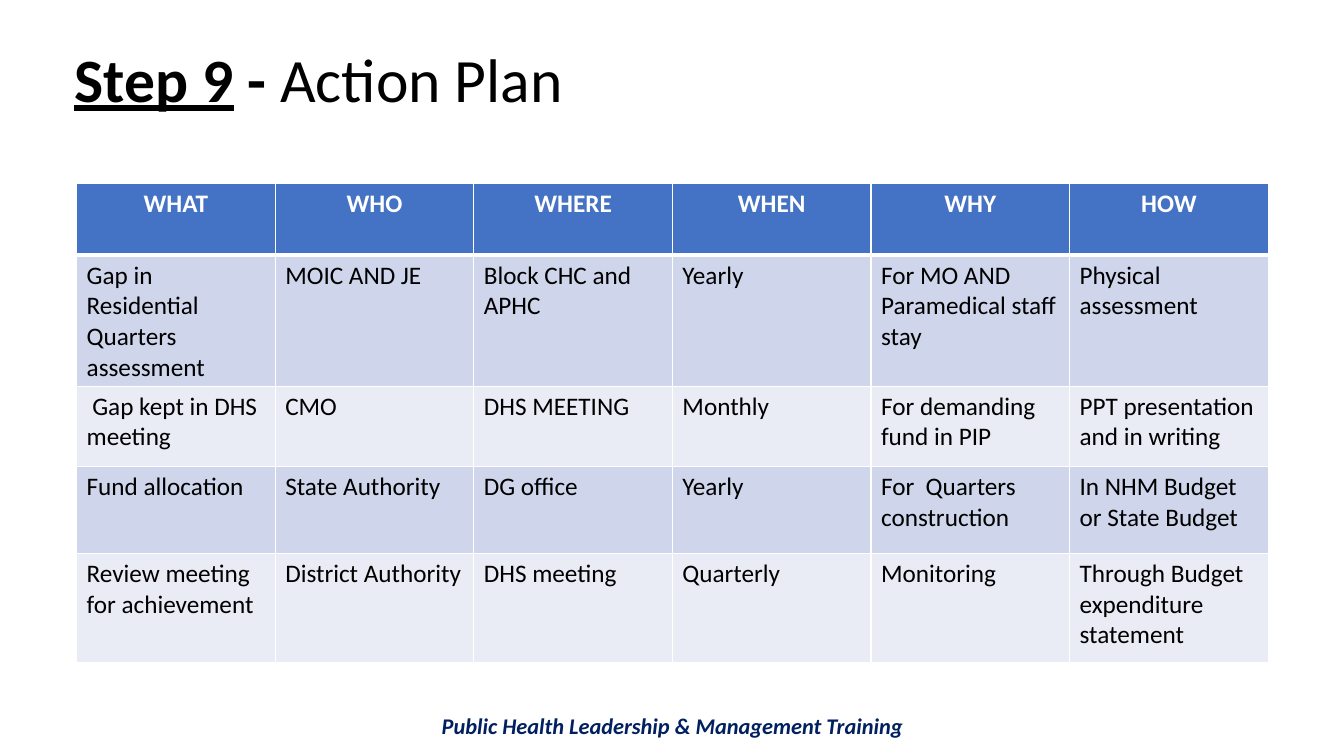
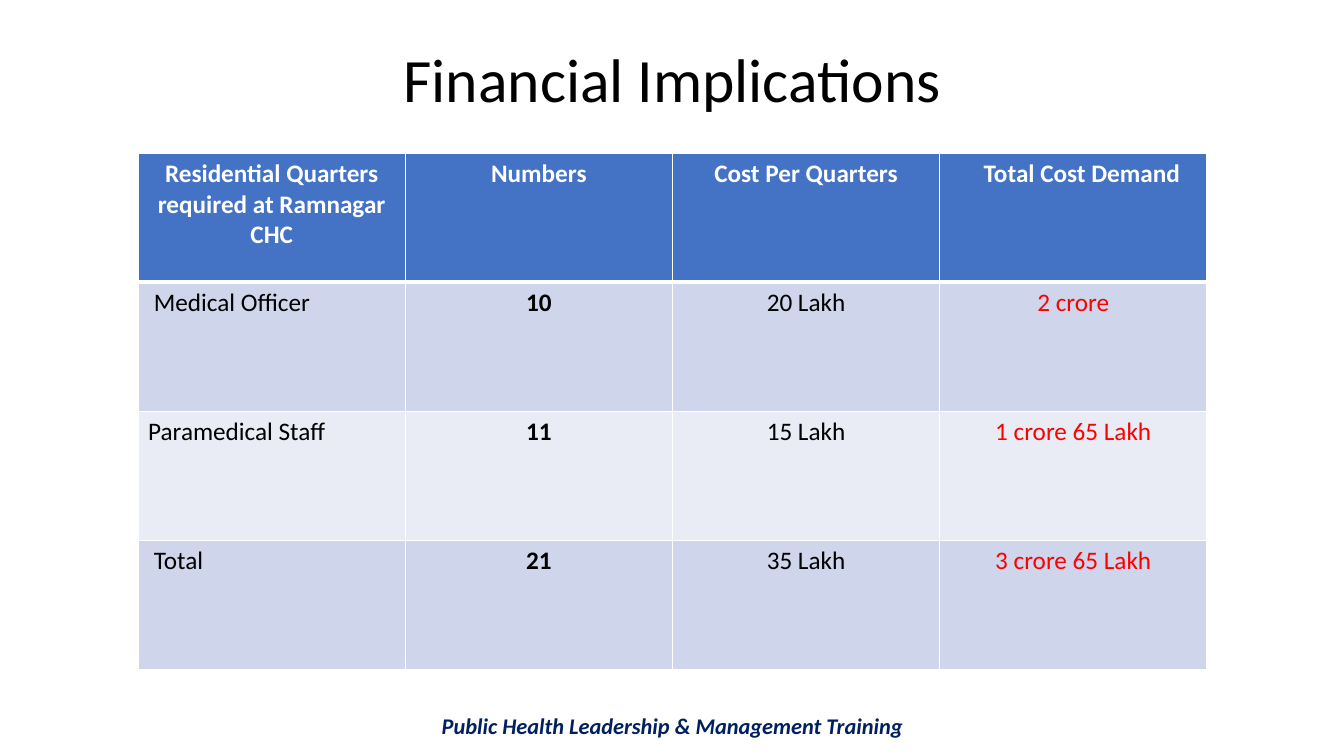
from dataclasses import dataclass

from lxml.etree import SubElement
from pptx import Presentation
from pptx.dml.color import RGBColor as RGB
from pptx.enum.text import MSO_ANCHOR as ANCHOR, PP_ALIGN as ALIGN
from pptx.oxml.ns import qn
from pptx.util import Inches, Pt


@dataclass(frozen=True)
class Theme:
    font: str = "Calibri"
    title_size: int = 44
    table_size: int = 18
    footer_size: int = 16
    text: str = "000000"
    white: str = "FFFFFF"
    header: str = "4472C4"
    bands: tuple = ("CFD5EA", "E9EBF5")
    footer: str = "002060"
    accent: str = "FF0000"


FOOTER = "Public Health Leadership & Management Training"


class Deck:
    def __init__(self, theme):
        self.theme = theme
        self.prs = Presentation()
        self.prs.slide_width, self.prs.slide_height = Inches(13.33), Inches(7.5)
        self.slide = None

    def new_slide(self):
        self.slide = self.prs.slides.add_slide(self.prs.slide_layouts[6])
        self.footer()

    def style(self, r, size, color, bold=False):
        f = r.font
        f.name, f.size, f.bold = self.theme.font, Pt(size), bold
        f.color.rgb = RGB.from_string(color)

    def text_box(self, left, top, width, height, align):
        box = self.slide.shapes.add_textbox(*map(Inches, (left, top, width, height)))
        tf = box.text_frame
        tf.word_wrap = True
        tf.paragraphs[0].alignment = align
        return tf

    def footer(self):
        tf = self.text_box(0.92, 7.02, 11.5, 0.37, ALIGN.CENTER)
        p = tf.paragraphs[0]
        p.text = FOOTER
        self.style(p.runs[0], self.theme.footer_size, self.theme.footer, bold=True)
        p.runs[0].font.italic = True

    def title(self, text, lead="", dash="", align=ALIGN.LEFT):
        """Title with an optional bold, underlined lead and a bold dash."""
        tf = self.text_box(0.64, 0.11, 12.06, 1.41, align)
        tf.vertical_anchor = ANCHOR.MIDDLE
        p = tf.paragraphs[0]
        p.line_spacing = 0.9
        for part in filter(None, (lead, dash, text)):
            r = p.add_run()
            r.text = part
            self.style(r, self.theme.title_size, self.theme.text, bold=part != text)
            r.font.underline = part == lead

    def borders(self, cell, top, bottom):
        tcPr = cell._tc.get_or_add_tcPr()
        for side, width in (("L", 1), ("R", 1), ("T", top), ("B", bottom)):
            ln = SubElement(tcPr, qn(f"a:ln{side}"), w=str(Pt(width)))
            fill = SubElement(ln, qn("a:solidFill"))
            SubElement(fill, qn("a:srgbClr"), val=self.theme.white)

    def table(self, left, top, col_width, row_heights, rows, formats):
        """formats holds (alignment, colour, bold) for each body column."""
        t = self.theme
        n = len(formats)
        frame = self.slide.shapes.add_table(
            len(rows), n, Inches(left), Inches(top),
            Inches(col_width * n), Inches(sum(row_heights)))
        table = frame.table
        for col in table.columns:
            col.width = Inches(col_width)
        for i, (height, row) in enumerate(zip(row_heights, rows)):
            table.rows[i].height = Inches(height)
            band = t.bands[(i - 1) % 2] if i else t.header
            for j, text in enumerate(row):
                align, color, bold = formats[j] if i else (ALIGN.CENTER, t.white, True)
                cell = table.cell(i, j)
                self.borders(cell, 3 if i == 1 else 1, 1 if i else 3)
                cell.fill.solid()
                cell.fill.fore_color.rgb = RGB.from_string(band)
                p = cell.text_frame.paragraphs[0]
                p.text = text
                p.alignment = align
                self.style(p.runs[0], t.table_size, color, bold)
        return table


def main():
    theme = Theme()
    deck = Deck(theme)

    # Action plan
    deck.new_slide()
    deck.title("Action Plan", lead="Step 9", dash=" - ")
    plan = [
        ("WHAT", "WHO", "WHERE", "WHEN", "WHY", "HOW"),
        ("Gap in Residential Quarters assessment", "MOIC AND JE",
         "Block CHC and APHC", "Yearly",
         "For MO AND Paramedical staff stay", "Physical assessment"),
        (" Gap kept in DHS meeting", "CMO", "DHS MEETING", "Monthly",
         "For demanding fund in PIP", "PPT presentation and in writing"),
        ("Fund allocation", "State Authority", "DG office", "Yearly",
         "For  Quarters construction", "In NHM Budget or State Budget"),
        ("Review meeting for achievement", "District Authority",
         "DHS meeting", "Quarterly", "Monitoring",
         "Through Budget expenditure statement"),
    ]
    deck.table(0.76, 1.82, 1.97, (0.71, 1.3, 0.8, 0.86, 1.08), plan,
               [(ALIGN.LEFT, theme.text, False)] * 6)

    # Financial implications
    deck.new_slide()
    deck.title("Financial Implications", align=ALIGN.CENTER)
    costs = [
        ("Residential Quarters required at Ramnagar CHC", "Numbers",
         "Cost Per Quarters", "Total Cost Demand"),
        (" Medical Officer", "10", "20 Lakh", "2 crore"),
        ("Paramedical Staff", "11", "15 Lakh", "1 crore 65 Lakh"),
        (" Total", "21", "35 Lakh", "3 crore 65 Lakh"),
    ]
    table = deck.table(1.37, 1.52, 2.65, [1.28] * 4, costs, [
        (ALIGN.JUSTIFY, theme.text, False),
        (ALIGN.CENTER, theme.text, True),
        (ALIGN.CENTER, theme.text, False),
        (ALIGN.CENTER, theme.accent, False),
    ])
    # The last heading sits slightly right of centre
    table.cell(0, 3).margin_left = Inches(0.27)

    deck.prs.save("out.pptx")


if __name__ == "__main__":
    main()
